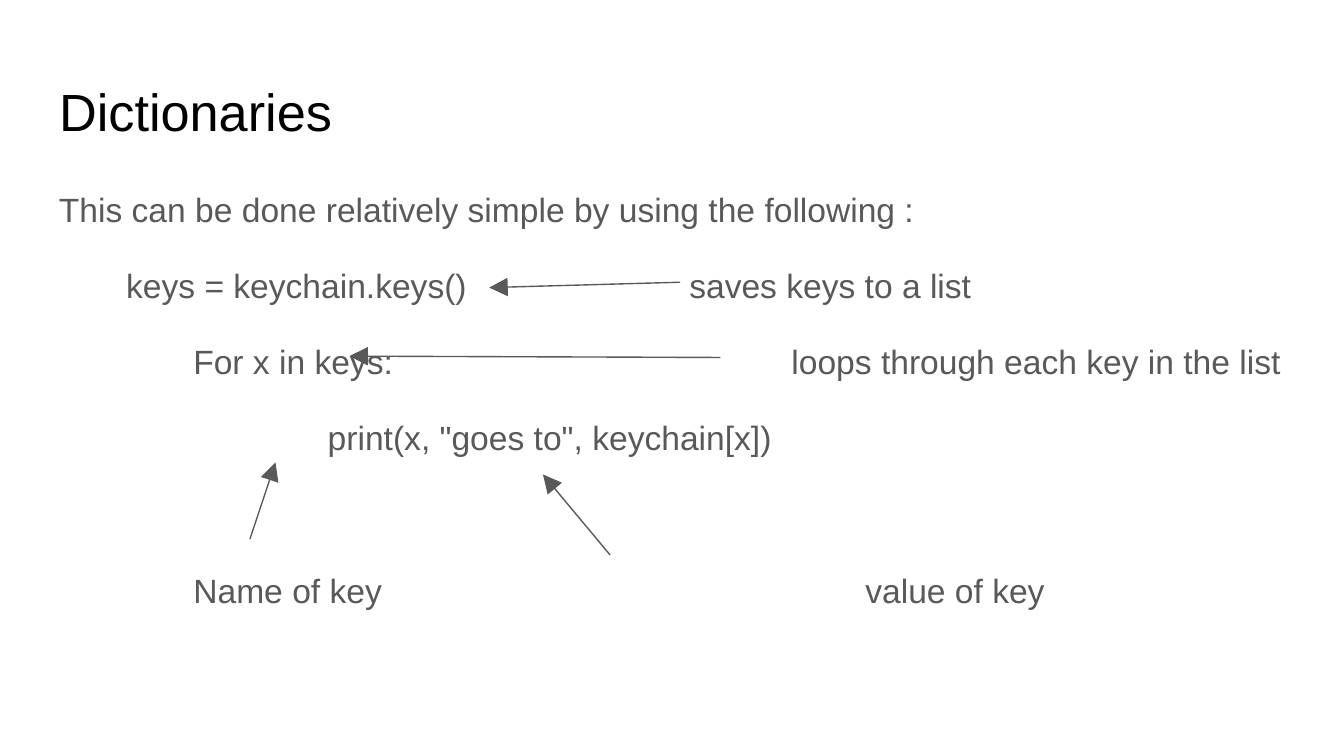
from lxml import etree
from pptx import Presentation
from pptx.dml.color import RGBColor
from pptx.enum.shapes import MSO_CONNECTOR
from pptx.enum.text import MSO_ANCHOR, MSO_AUTO_SIZE, PP_ALIGN
from pptx.oxml.ns import qn
from pptx.util import Inches, Pt

BLACK, GREY = "000000", "595959"
TITLE = "Dictionaries"
# text, tab stops in inches, space before in points
LINES = [
    ("This can be done relatively simple by using the following :", [], 0),
    ("\tkeys = keychain.keys()\tsaves keys to a list", [0.5, 4.69], 0),
    ("\tFor x in keys:\tloops through each key in the list", [1, 5.45], 0),
    ('\tprint(x, "goes to", keychain[x])', [2], 0),
    ("\tName of key\tvalue of key", [1, 6], 40.8),
]
# start and end; the head is at the end
ARROWS = [
    ((5.06, 2.1), (3.64, 2.14)),
    ((5.36, 2.66), (2.6, 2.65)),
    ((1.86, 4.01), (2.05, 3.44)),
    ((4.54, 4.13), (4.04, 3.53)),
]


def rgb(color):
    return RGBColor.from_string(color)


def set_frame(tf):
    tf.word_wrap = True
    tf.auto_size = MSO_AUTO_SIZE.NONE
    tf.vertical_anchor = MSO_ANCHOR.TOP
    tf.margin_left = tf.margin_right = Inches(0.1)
    tf.margin_top = tf.margin_bottom = Inches(0.1)


def set_font(p, size, color):
    p.alignment = PP_ALIGN.LEFT
    for r in p.runs:
        r.font.name = "Arial"
        r.font.size = Pt(size)
        r.font.color.rgb = rgb(color)


def set_tabs(p, stops):
    tabs = etree.SubElement(p._p.get_or_add_pPr(), qn("a:tabLst"))
    for stop in stops:
        etree.SubElement(tabs, qn("a:tab"), pos=str(Inches(stop)), algn="l")


def add_arrow(s, start, end):
    points = [Inches(v) for v in start + end]
    arrow = s.shapes.add_connector(MSO_CONNECTOR.STRAIGHT, *points)
    arrow.line.color.rgb = rgb(GREY)
    arrow.line.width = Pt(0.75)
    etree.SubElement(arrow.line._get_or_add_ln(), qn("a:tailEnd"),
                     type="triangle", w="lg", len="lg")
    etree.SubElement(arrow._element.spPr, qn("a:effectLst"))


prs = Presentation()
prs.slide_width = Inches(10)
prs.slide_height = Inches(10 * 9 / 16)
s = prs.slides.add_slide(prs.slide_layouts[5])

title = s.shapes.title
title.left, title.top = Inches(0.34), Inches(0.49)
title.width, title.height = Inches(9.32), Inches(0.63)
title.text_frame.text = TITLE
set_frame(title.text_frame)
set_font(title.text_frame.paragraphs[0], 28, BLACK)

body = s.shapes.add_textbox(Inches(0.34), Inches(1.26), Inches(9.32), Inches(3.74))
tf = body.text_frame
set_frame(tf)
for i, (text, stops, before) in enumerate(LINES):
    p = tf.add_paragraph() if i else tf.paragraphs[0]
    p.text = text
    p.line_spacing = 1.15
    p.space_before, p.space_after = Pt(before), Pt(16)
    set_font(p, 18, GREY)
    if stops:
        set_tabs(p, stops)

for start, end in ARROWS:
    add_arrow(s, start, end)

prs.save("out.pptx")
